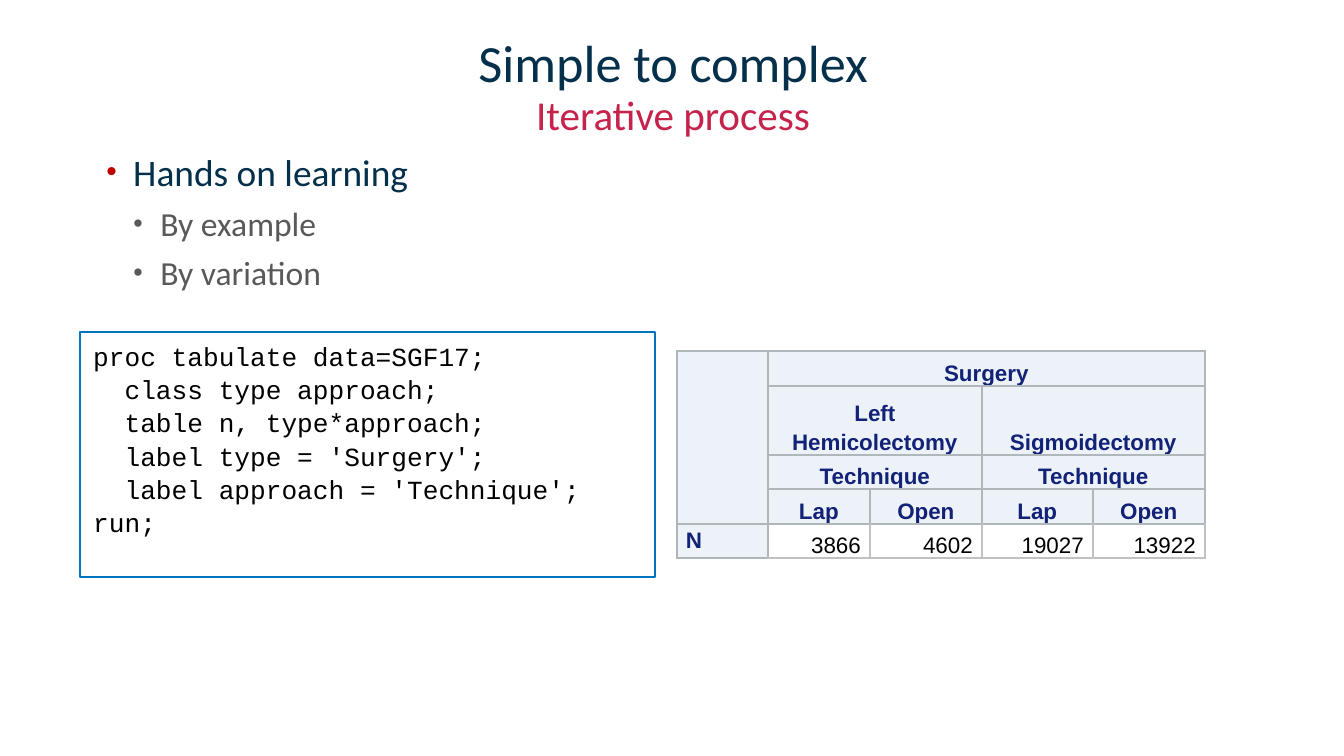
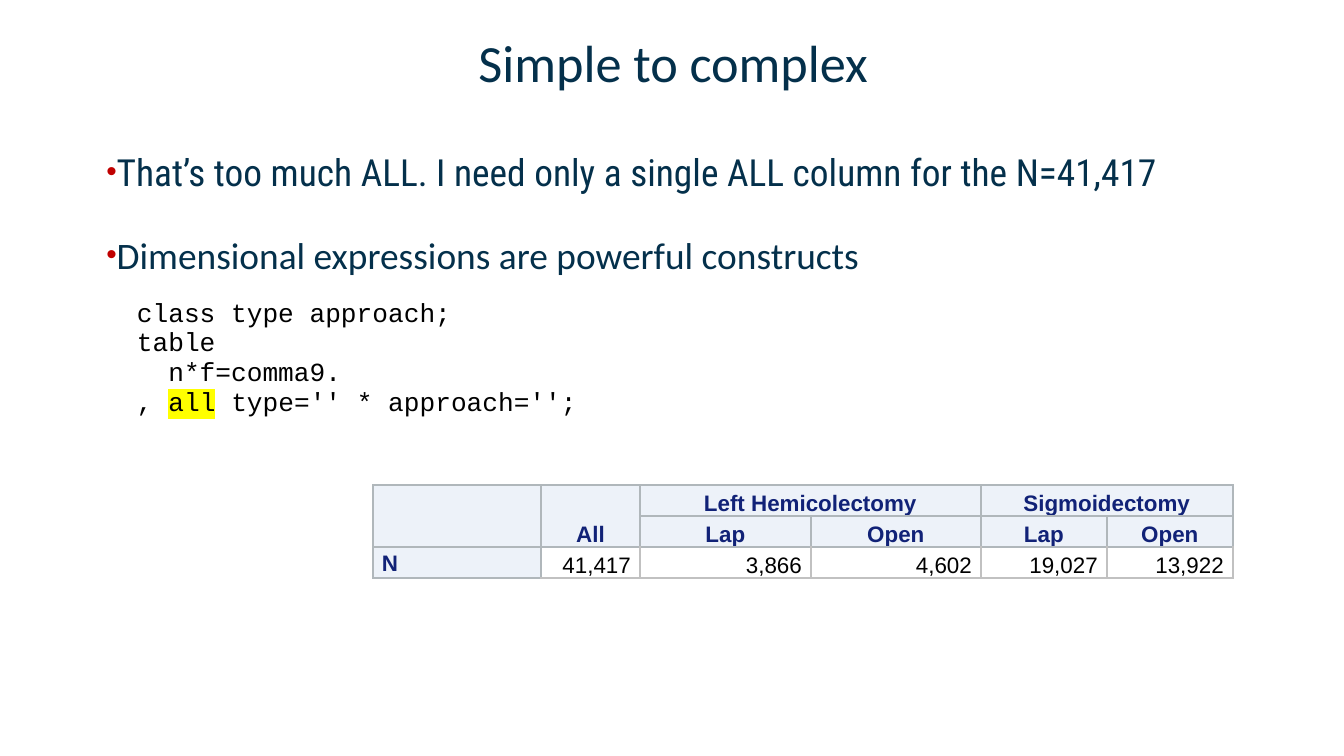
from dataclasses import dataclass
from itertools import product

from lxml.etree import SubElement
from pptx import Presentation
from pptx.dml.color import RGBColor
from pptx.enum.shapes import MSO_SHAPE
from pptx.enum.text import MSO_ANCHOR, PP_ALIGN
from pptx.oxml.ns import qn
from pptx.util import Pt

TITLE = "Simple to complex"

LEARNING = {
    "subtitle": "Iterative process",
    "bullets": [
        ("topic", "Hands on learning"),
        ("detail", "By example"),
        ("detail", "By variation"),
    ],
    "code": [
        "proc tabulate data=SGF17;",
        "  class type approach;",
        "  table n, type*approach;",
        "  label type = 'Surgery';",
        "  label approach = 'Technique';",
        "run;",
    ],
    "counts": {
        "origin": (677, 351),
        "columns": [91, 102, 112, 111, 112],
        "rows": [35, 69, 34, 35, 34],
        "cells": [
            ["", "Surgery", "", "", ""],
            ["", "Left Hemicolectomy", "", "Sigmoidectomy", ""],
            ["", "Technique", "", "Technique", ""],
            ["", "Lap", "Open", "Lap", "Open"],
            ["N", "3866", "4602", "19027", "13922"],
        ],
        "spans": [(0, 0, 4, 1), (0, 1, 1, 4), (1, 1, 1, 2), (1, 3, 1, 2),
                  (2, 1, 1, 2), (2, 3, 1, 2)],
    },
}

SINGLE_ALL = {
    "bullets": [
        ("remark", "That’s too much ALL. I need only a single ALL column for the N=41,417"),
        ("principle", "Dimensional expressions are powerful constructs"),
    ],
    "code": [
        [("code", "class type approach;")],
        [("code", "table")],
        [("code", "  n*f=comma9.")],
        [("code", ", "), ("marked", "all"), ("code", " type='' * approach='';")],
    ],
    "counts": {
        "origin": (373, 485),
        "columns": [168, 99, 171, 170, 126, 126],
        "rows": [29, 29, 29],
        "cells": [
            ["", "All", "Left Hemicolectomy", "", "Sigmoidectomy", ""],
            ["", "", "Lap", "Open", "Lap", "Open"],
            ["N", "41,417", "3,866", "4,602", "19,027", "13,922"],
        ],
        "spans": [(0, 0, 2, 1), (0, 1, 2, 1), (0, 2, 1, 2), (0, 4, 1, 2)],
    },
}


@dataclass(frozen=True)
class Theme:
    navy: str = "04304B"
    crimson: str = "C6234C"
    red: str = "C00000"
    gray: str = "595959"
    black: str = "000000"
    blue: str = "0074BE"
    header_ink: str = "112277"
    header_fill: str = "EDF2F9"
    value_fill: str = "FFFFFF"
    header_edge: str = "B0B7BB"
    value_edge: str = "C1C1C1"
    marker: str = "FFFF00"
    title_size: int = 28
    subtitle_size: int = 22
    topic_size: int = 20
    detail_size: int = 18
    code_size: int = 14
    cell_size: int = 12


THEME = Theme()
EMU_PER_PX = 914400 / 134.4

FONTS = {
    "title": ("Calibri", THEME.title_size, THEME.navy, False),
    "subtitle": ("Calibri", THEME.subtitle_size, THEME.crimson, False),
    "topic": ("Calibri", THEME.topic_size, THEME.navy, False),
    "detail": ("Calibri", THEME.detail_size, THEME.gray, False),
    "remark": ("Roboto Condensed", THEME.topic_size, THEME.navy, False),
    "principle": ("Calibri", THEME.topic_size, THEME.navy, False),
    "code": ("Courier New", THEME.code_size, THEME.black, False),
    "marked": ("Courier New", THEME.code_size, THEME.black, False),
    "header": ("Arial", THEME.cell_size, THEME.header_ink, True),
    "value": ("Arial", THEME.cell_size, THEME.black, False),
}

BULLETS = {
    "topic": {"level": 0, "margin": 27, "color": THEME.red, "before": 8},
    "detail": {"level": 1, "margin": 54, "color": THEME.gray, "before": 8},
    "remark": {"level": 0, "margin": 0, "color": THEME.red, "before": 0},
    "principle": {"level": 0, "margin": 0, "color": THEME.red, "before": 24},
}
HANGING = 27

TITLE_BOX = (93, 28, 1160, 67)
SUBTITLE_BOX = (93, 94, 1160, 40)
BODY_BOX = (93, 149, 1160, 535)
CODE_PANEL = (80, 332, 575, 245)
CODE_TABLE = (128, 297, 481, 125)
CELL_INSETS = {"margin_left": 9, "margin_top": 0, "margin_right": 9, "margin_bottom": 0}
PLAIN_TABLE = "{2D5ABB26-0587-4C30-8999-92F81FD0307C}"


def px(length):
    return round(length * EMU_PER_PX)


def scaled(box):
    return [px(length) for length in box]


def apply(target, formats):
    for attribute, value in formats.items():
        setattr(target, attribute, value)


def add_run(paragraph, style, words):
    run = paragraph.add_run()
    run.text = words
    name, size, color, bold = FONTS[style]
    apply(run.font, {"name": name, "size": Pt(size), "bold": bold})
    run.font.color.rgb = RGBColor.from_string(color)
    if style == "marked":
        properties = run.font._element
        highlight = SubElement(properties, qn("a:highlight"))
        SubElement(highlight, qn("a:srgbClr"), val=THEME.marker)
        properties.find(qn("a:solidFill")).addnext(highlight)


def paragraphs(frame, items):
    for index, item in enumerate(items):
        yield (frame.add_paragraph() if index else frame.paragraphs[0]), item, index


def add_heading(slide, box, style, words):
    frame = slide.shapes.add_textbox(*scaled(box)).text_frame
    apply(frame, {"word_wrap": True, "vertical_anchor": MSO_ANCHOR.MIDDLE})
    frame.paragraphs[0].alignment = PP_ALIGN.CENTER
    add_run(frame.paragraphs[0], style, words)


def add_bullets(slide, bullets):
    frame = slide.shapes.add_textbox(*scaled(BODY_BOX)).text_frame
    frame.word_wrap = True
    for paragraph, (style, words), index in paragraphs(frame, bullets):
        look = BULLETS[style]
        apply(paragraph, {"level": look["level"], "line_spacing": 0.85})
        if index:
            paragraph.space_before = Pt(look["before"])
        properties = paragraph._p.get_or_add_pPr()
        properties.set("marL", str(px(look["margin"])))
        properties.set("indent", str(-px(HANGING)))
        color = SubElement(properties, qn("a:buClr"))
        SubElement(color, qn("a:srgbClr"), val=look["color"])
        SubElement(properties, qn("a:buSzPct"), val="80000")
        SubElement(properties, qn("a:buFont"), typeface="Arial")
        SubElement(properties, qn("a:buChar"), char="•")
        add_run(paragraph, style, words)


def add_code_panel(slide, lines):
    panel = slide.shapes.add_shape(MSO_SHAPE.RECTANGLE, *scaled(CODE_PANEL))
    panel.shadow.inherit = False
    panel.fill.background()
    panel.line.color.rgb = RGBColor.from_string(THEME.blue)
    panel.line.width = Pt(0.75)
    apply(panel.text_frame, {"word_wrap": True, "vertical_anchor": MSO_ANCHOR.TOP})
    for paragraph, line, _ in paragraphs(panel.text_frame, lines):
        apply(paragraph, {"alignment": PP_ALIGN.LEFT, "line_spacing": 1.06})
        add_run(paragraph, "code", line)


def add_plain_table(slide, origin, columns, rows):
    box = scaled((*origin, sum(columns), sum(rows)))
    table = slide.shapes.add_table(len(rows), len(columns), *box).table
    apply(table, {"first_row": False, "horz_banding": False})
    table._tbl.tblPr.find(qn("a:tableStyleId")).text = PLAIN_TABLE
    for column, width in zip(table.columns, columns):
        column.width = px(width)
    for row, height in zip(table.rows, rows):
        row.height = px(height)
    for cell in table.iter_cells():
        apply(cell, {side: px(inset) for side, inset in CELL_INSETS.items()})
    return table


def add_code_table(slide, lines):
    left, top, width, height = CODE_TABLE
    cell = add_plain_table(slide, (left, top), [width], [height]).cell(0, 0)
    cell.vertical_anchor = MSO_ANCHOR.MIDDLE
    cell.fill.background()
    for paragraph, pieces, _ in paragraphs(cell.text_frame, lines):
        for style, words in pieces:
            add_run(paragraph, style, words)


def set_borders(cell, edges):
    properties = cell._tc.get_or_add_tcPr()
    for side, color in edges.items():
        line = SubElement(properties, qn(f"a:ln{side}"), w=str(Pt(1)))
        fill = SubElement(line, qn("a:solidFill"))
        SubElement(fill, qn("a:srgbClr"), val=color)


def add_counts(slide, counts):
    rows, columns = counts["rows"], counts["columns"]
    table = add_plain_table(slide, counts["origin"], columns, rows)
    for row, column in product(range(len(rows)), range(len(columns))):
        cell, words = table.cell(row, column), counts["cells"][row][column]
        last = row == len(rows) - 1
        is_value = last and column > 0
        edges = dict.fromkeys("LRTB", THEME.value_edge if is_value else THEME.header_edge)
        edges["T"] = THEME.header_edge
        if column == 1:
            edges["L"] = THEME.header_edge
        set_borders(cell, edges)
        cell.fill.solid()
        fill = THEME.value_fill if is_value else THEME.header_fill
        cell.fill.fore_color.rgb = RGBColor.from_string(fill)
        is_label = last and column == 0
        cell.vertical_anchor = MSO_ANCHOR.TOP if is_label else MSO_ANCHOR.BOTTOM
        paragraph = cell.text_frame.paragraphs[0]
        if words:
            alignment = (PP_ALIGN.RIGHT if is_value
                         else PP_ALIGN.LEFT if is_label else PP_ALIGN.CENTER)
            apply(paragraph, {"alignment": alignment, "line_spacing": 1.15})
            add_run(paragraph, "value" if is_value else "header", words)
        else:
            ending = SubElement(paragraph._p, qn("a:endParaRPr"))
            ending.set("sz", str(THEME.cell_size * 100))
    for row, column, height, width in counts["spans"]:
        table.cell(row, column).merge(table.cell(row + height - 1, column + width - 1))


def add_titled_slide(deck, content):
    slide = deck.slides.add_slide(deck.slide_layouts[6])
    add_heading(slide, TITLE_BOX, "title", TITLE)
    if "subtitle" in content:
        add_heading(slide, SUBTITLE_BOX, "subtitle", content["subtitle"])
    add_bullets(slide, content["bullets"])
    return slide


def main():
    deck = Presentation()
    apply(deck, {"slide_width": px(1344), "slide_height": px(756)})
    learning = add_titled_slide(deck, LEARNING)
    add_counts(learning, LEARNING["counts"])
    add_code_panel(learning, LEARNING["code"])
    single_all = add_titled_slide(deck, SINGLE_ALL)
    add_code_table(single_all, SINGLE_ALL["code"])
    add_counts(single_all, SINGLE_ALL["counts"])
    deck.save("out.pptx")


if __name__ == "__main__":
    main()
